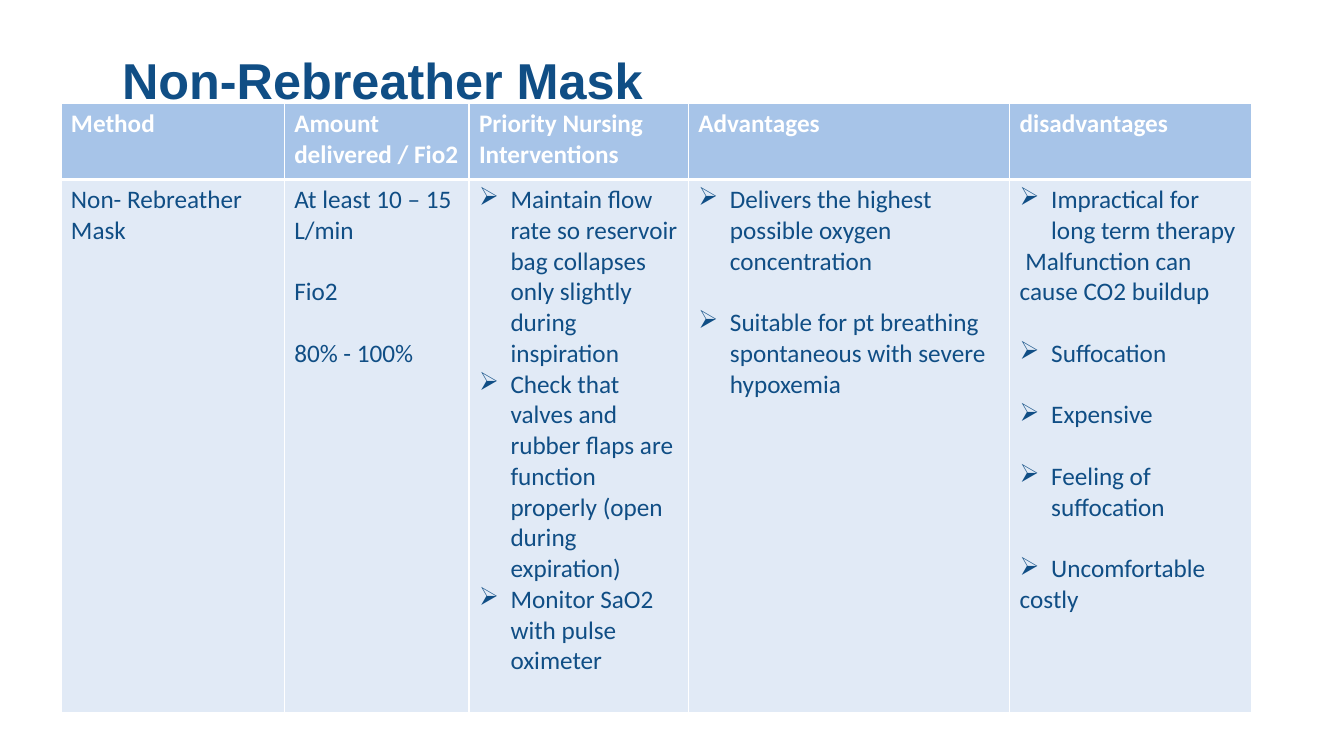
from lxml.etree import SubElement
from pptx import Presentation
from pptx.dml.color import RGBColor as Rgb
from pptx.enum.text import MSO_ANCHOR as Anchor, MSO_AUTO_SIZE as AutoSize, PP_ALIGN as Align
from pptx.oxml.ns import qn
from pptx.util import Pt

THEME = {
    "navy": Rgb.from_string("104E85"),
    "white": Rgb.from_string("FFFFFF"),
    "header": Rgb.from_string("A7C4E8"),
    "body": Rgb.from_string("E1EAF6"),
    "title_font": "Arial", "title_size": Pt(36),
    "cell_font": "Calibri", "cell_size": Pt(18),
}
BLANK_LINE = Pt(22)
HANG = Pt(22.5)


def set_font(para, name, size, color, bold):
    para.font.name, para.font.size = name, size
    para.font.color.rgb, para.font.bold = color, bold


def set_border(cell, side, width):
    line = SubElement(cell._tc.get_or_add_tcPr(), qn("a:ln" + side), w=str(Pt(width)))
    fill = SubElement(line, qn("a:solidFill"))
    SubElement(fill, qn("a:srgbClr"), val=str(THEME["white"]))


# Slide
deck = Presentation()
deck.slide_width, deck.slide_height = Pt(960), Pt(540)
page = deck.slides.add_slide(deck.slide_layouts[5])

# Title
title = page.shapes.title
title.left, title.top, title.width, title.height = Pt(80), Pt(26.6), Pt(851), Pt(65)
frame = title.text_frame
frame.text = "Non-Rebreather Mask"
frame.auto_size, frame.word_wrap = AutoSize.NONE, True
frame.vertical_anchor = Anchor.MIDDLE
heading = frame.paragraphs[0]
heading.alignment, heading.line_spacing = Align.LEFT, 0.9
set_font(heading, THEME["title_font"], THEME["title_size"], THEME["navy"], True)

# Each column: width, header, then (style, gap in lines before, text)
columns = [
    (159.5, "Method", [("plain", 0, "Non- Rebreather Mask")]),
    (132, "Amount delivered / Fio2", [
        ("plain", 0, "At least 10 – 15 L/min"),
        ("plain", 1, "Fio2"),
        ("plain", 1, "80% - 100%")]),
    (156.75, "Priority Nursing Interventions", [
        ("bullet", 0, "Maintain flow rate so reservoir bag collapses only slightly during inspiration"),
        ("bullet", 0, "Check that valves and rubber flaps are function properly (open during expiration)"),
        ("bullet", 0, "Monitor SaO2 with pulse oximeter")]),
    (229.5, "Advantages", [
        ("bullet", 0, "Delivers the highest possible oxygen concentration"),
        ("bullet", 1, "Suitable for pt breathing spontaneous with severe hypoxemia")]),
    (173, "disadvantages", [
        ("bullet", 0, "Impractical for long term therapy"),
        ("indented", 0, "Malfunction can cause CO2 buildup"),
        ("bullet", 1, "Suffocation"),
        ("bullet", 1, "Expensive"),
        ("bullet", 1, "Feeling of suffocation"),
        ("bullet", 1, "Uncomfortable"),
        ("plain", 0, "costly")]),
]

# Table
row_heights = [54.5, 380.5]
table = page.shapes.add_table(2, len(columns), Pt(43.5), Pt(73.75),
                              Pt(sum(column[0] for column in columns)),
                              Pt(sum(row_heights))).table
table.horz_banding = False
for row, height in zip(table.rows, row_heights):
    row.height = Pt(height)

for index, (width, header, items) in enumerate(columns):
    table.columns[index].width = Pt(width)
    rows = [([("plain", 0, header)], "header", "white", True, 3),
            (items, "body", "navy", False, 1)]
    for row_index, (entries, fill, color, bold, bottom) in enumerate(rows):
        cell = table.cell(row_index, index)

        # Borders and fill
        for side, line_width in (("L", 1), ("R", 1), ("T", 1 if row_index == 0 else 3), ("B", bottom)):
            set_border(cell, side, line_width)
        cell.fill.solid()
        cell.fill.fore_color.rgb = THEME[fill]

        # Text
        for number, (style, gap, text) in enumerate(entries):
            box = cell.text_frame
            para = box.add_paragraph() if number else box.paragraphs[0]
            para.text = text
            props = para._p.get_or_add_pPr()
            if style == "bullet":
                props.set("marL", str(HANG))
                props.set("indent", str(-HANG))
                SubElement(props, qn("a:buChar"), char="➢")
            elif style == "indented":
                props.set("marL", "0")
                props.set("indent", str(Pt(4)))
            if gap:
                para.space_before = gap * BLANK_LINE
            set_font(para, THEME["cell_font"], THEME["cell_size"], THEME[color], bold)

deck.save("out.pptx")
